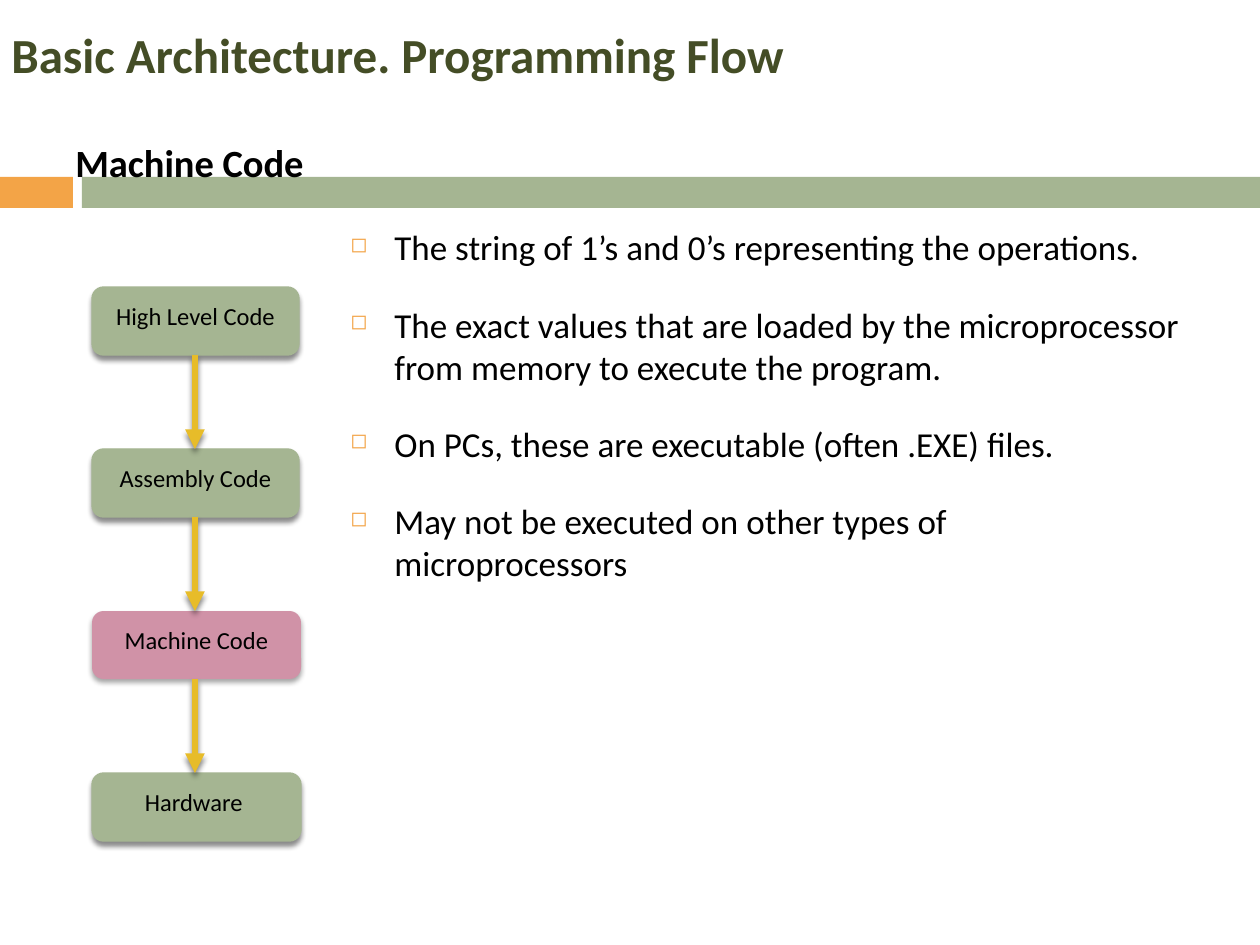
from itertools import pairwise
from lxml.etree import SubElement
from pptx import Presentation
from pptx.dml.color import RGBColor
from pptx.enum.shapes import MSO_CONNECTOR as Link, MSO_SHAPE as Kind
from pptx.enum.text import MSO_ANCHOR as Anchor, PP_ALIGN as Align
from pptx.oxml.ns import qn
from pptx.util import Pt

TITLE = "Basic Architecture. Programming Flow"
HEAD = "Machine Code"
POINTS = [
    "The string of 1’s and 0’s representing the operations.",
    "The exact values that are loaded by the microprocessor from memory to execute the program.",
    "On PCs, these are executable (often .EXE) files.",
    "May not be executed on other types of microprocessors",
]
GREEN, PINK, GOLD, ORANGE = "A5B592", "D092A7", "E7BC29", "F3A447"
STEPS = [
    ("High Level Code", GREEN, 207),
    ("Assembly Code", GREEN, 207),
    ("Machine Code", PINK, 209),
    ("Hardware ", GREEN, 209),
]
BANDS = [(0, 73, ORANGE), (82, 1178, GREEN)]
LEFT, TOP, TALL, PITCH, MID = 92, 287, 68, 162, 195


def px(n):
    return round(n * 914400 / 126)


def tint(code):
    return RGBColor.from_string(code)


def node(parent, tag, **attrs):
    return SubElement(parent, qn(tag), {k: str(v) for k, v in attrs.items()})


def shade(shape, alpha=45, dist=2.4):
    props = shape._element.spPr
    for old in props.findall(qn("a:effectLst")):
        props.remove(old)
    glow = node(node(props, "a:effectLst"), "a:outerShdw", blurRad=Pt(3),
                dist=Pt(dist), dir=5400000, rotWithShape=0)
    node(node(glow, "a:srgbClr", val="000000"), "a:alpha", val=alpha * 1000)


def block(kind, x, y, w, h, color):
    shape = slide.shapes.add_shape(kind, px(x), px(y), px(w), px(h))
    shape.shadow.inherit = False
    shape.fill.solid()
    shape.fill.fore_color.rgb = tint(color)
    shape.line.fill.background()
    return shape


def area(x, y, w, h):
    return slide.shapes.add_textbox(px(x), px(y), px(w), px(h))


def write(shape, *lines, size=20, color="000000", bold=False, align=Align.LEFT,
          anchor=Anchor.TOP, before=0, top=6, bullet=False):
    frame = shape.text_frame
    frame.word_wrap = True
    frame.vertical_anchor = anchor
    frame.margin_top = px(top)
    for i, line in enumerate(lines):
        para = frame.add_paragraph() if i else frame.paragraphs[0]
        para.alignment = align
        para.space_before = Pt(before)
        run = para.add_run()
        run.text = line
        font = run.font
        font.name, font.size, font.bold = "Calibri", Pt(size), bold
        font.color.rgb = tint(color)
        if bullet:
            props = para._p.get_or_add_pPr()
            props.set("marL", str(px(44)))
            props.set("indent", str(px(-44)))
            node(node(props, "a:buClr"), "a:srgbClr", val=ORANGE)
            node(props, "a:buSzPct", val=60000)
            node(props, "a:buChar", char="◻")


deck = Presentation()
deck.slide_width, deck.slide_height = px(1260), px(945)
slide = deck.slides.add_slide(deck.slide_layouts[6])

for x, w, color in BANDS:
    block(Kind.RECTANGLE, x, 177, w, 31, color)

write(area(338, 220, 859, 693), *POINTS, before=20, bullet=True)
write(area(63, 136, 1134, 53), HEAD, size=22, bold=True, before=7, anchor=Anchor.MIDDLE)

tops = [TOP + i * PITCH for i in range(len(STEPS))]
for y, (name, color, w) in zip(tops, STEPS):
    box = block(Kind.ROUNDED_RECTANGLE, LEFT, y, w, TALL, color)
    box.adjustments[0] = 0.17
    if color == GREEN:
        box.line.color.rgb = tint(color)
        box.line.width = Pt(0.79)
        shade(box)
    else:
        shade(box, alpha=35, dist=2)
    write(box, name, size=14, align=Align.CENTER, top=11)

for y, end in pairwise(tops):
    arrow = slide.shapes.add_connector(Link.STRAIGHT, px(MID), px(y + TALL), px(MID), px(end))
    arrow.line.color.rgb = tint(GOLD)
    arrow.line.width = Pt(3.75)
    node(arrow.line._get_or_add_ln(), "a:tailEnd", type="triangle")
    shade(arrow)

write(area(-1, 1, 1246, 105), TITLE, size=28, color="444D26", bold=True, anchor=Anchor.MIDDLE)

deck.save("out.pptx")
